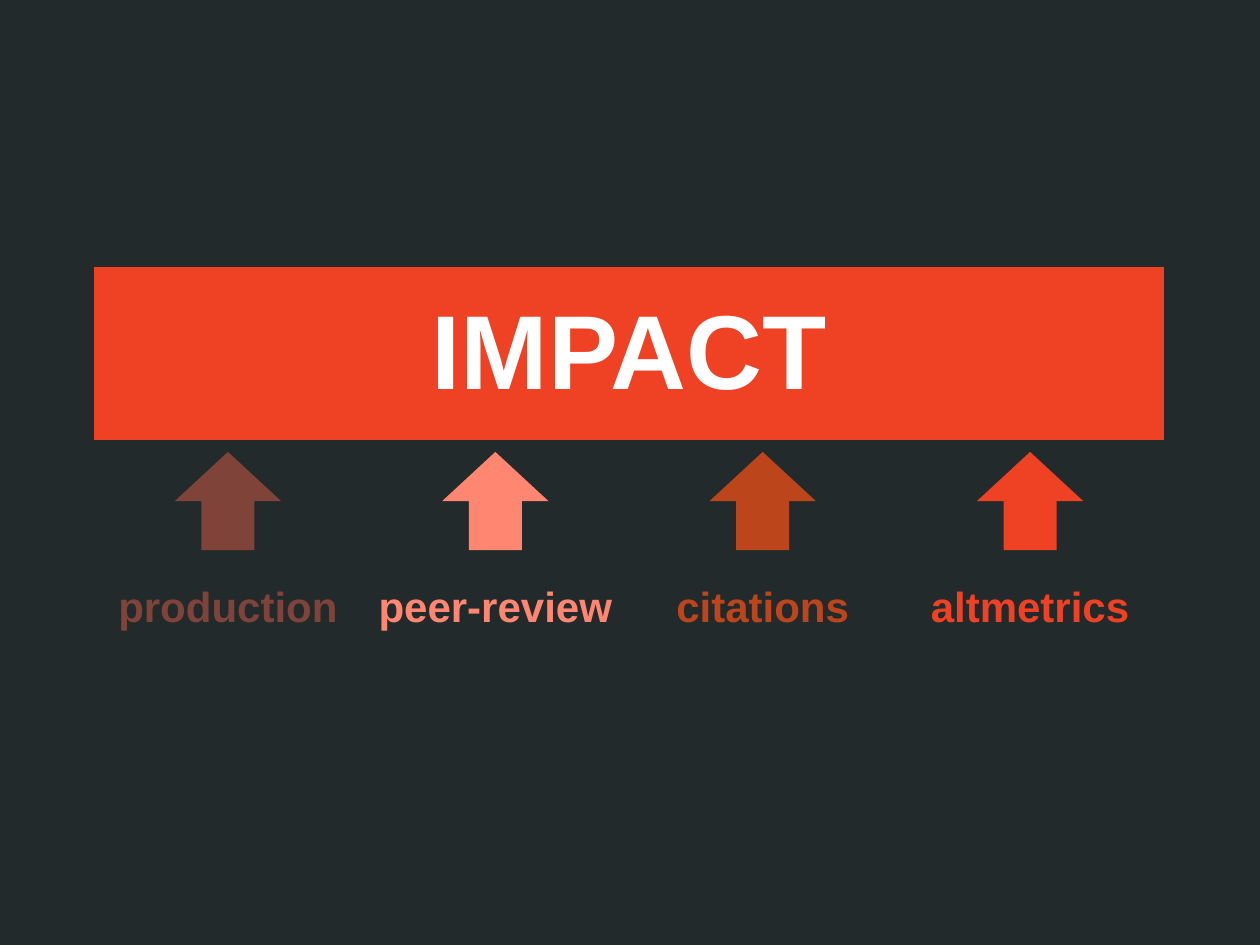
from dataclasses import dataclass

from pptx import Presentation
from pptx.dml.color import RGBColor
from pptx.enum.shapes import MSO_SHAPE
from pptx.enum.text import MSO_ANCHOR, MSO_AUTO_SIZE, PP_ALIGN
from pptx.oxml.ns import qn
from pptx.util import Cm, Pt

NO_STYLE_NO_GRID = "{2D5ABB26-0587-4C30-8999-92F81FD0307C}"


@dataclass(frozen=True)
class Theme:
    font: str = "Arial"
    background: str = "232A2C"
    banner: str = "EF4123"
    banner_text: str = "FFFFFF"
    production: str = "7F4339"
    peer_review: str = "FF8772"
    citations: str = "BC451B"
    altmetrics: str = "EF4123"
    banner_size: int = 60
    label_size: int = 24


class ImpactPage:
    """Holds the theme and the slide being drawn; lengths are centimetres."""

    def __init__(self, deck, theme):
        self.theme = theme
        self.page = deck.slides.add_slide(deck.slide_layouts[6])
        self.paint(self.page.background.fill, theme.background)

    def paint(self, fill, color):
        fill.solid()
        fill.fore_color.rgb = RGBColor.from_string(color)

    def set_text(self, frame, text, size, color):
        para = frame.paragraphs[0]
        para.alignment = PP_ALIGN.CENTER
        span = para.add_run()
        span.text = text
        formats = {"name": self.theme.font, "size": Pt(size), "bold": True}
        for name, value in formats.items():
            setattr(span.font, name, value)
        span.font.color.rgb = RGBColor.from_string(color)

    def banner_table(self, text, left, top, column_width, row_heights, columns):
        """Table whose merged first row is the banner and whose other rows are clear."""
        frame = self.page.shapes.add_table(
            len(row_heights), columns, Cm(left), Cm(top),
            Cm(column_width * columns), Cm(sum(row_heights)))
        table = frame.table
        table.first_row = table.horz_banding = False
        table._tbl.tblPr.find(qn("a:tableStyleId")).text = NO_STYLE_NO_GRID
        for column in table.columns:
            column.width = Cm(column_width)
        for row, height in zip(table.rows, row_heights):
            row.height = Cm(height)
        for cell in table.iter_cells():
            cell.fill.background()
        banner = table.cell(0, 0)
        banner.merge(table.cell(0, columns - 1))
        self.paint(banner.fill, self.theme.banner)
        banner.vertical_anchor = MSO_ANCHOR.MIDDLE
        self.set_text(banner.text_frame, text, self.theme.banner_size, self.theme.banner_text)

    def up_arrow(self, center, top, width, height, color):
        arrow = self.page.shapes.add_shape(
            MSO_SHAPE.DOWN_ARROW, Cm(center - width / 2), Cm(top), Cm(width), Cm(height))
        arrow.rotation = 180
        arrow.shadow.inherit = False
        self.paint(arrow.fill, color)
        arrow.line.fill.background()

    def label(self, text, center, top, width, height, color):
        box = self.page.shapes.add_textbox(
            Cm(center - width / 2), Cm(top), Cm(width), Cm(height))
        box.text_frame.word_wrap = False
        box.text_frame.auto_size = MSO_AUTO_SIZE.SHAPE_TO_FIT_TEXT
        self.set_text(box.text_frame, text, self.theme.label_size, color)


def main():
    deck = Presentation()
    deck.slide_width, deck.slide_height = Cm(25.4), Cm(19.05)
    theme = Theme()
    page = ImpactPage(deck, theme)

    # Label, its box width and its colour
    sources = [
        ("production", 4.98, theme.production),
        ("peer-review", 5.26, theme.peer_review),
        ("citations", 4.04, theme.citations),
        ("altmetrics", 4.55, theme.altmetrics),
    ]
    left, column_width = 1.9, 5.39
    page.banner_table("IMPACT", left, 5.38, column_width, [3.48, 4.83], len(sources))
    for index, (text, label_width, color) in enumerate(sources):
        center = left + column_width * (index + 0.5)
        page.up_arrow(center, 9.11, 2.14, 1.98, color)
        page.label(text, center, 11.58, label_width, 1.28, color)

    deck.save("out.pptx")


if __name__ == "__main__":
    main()
